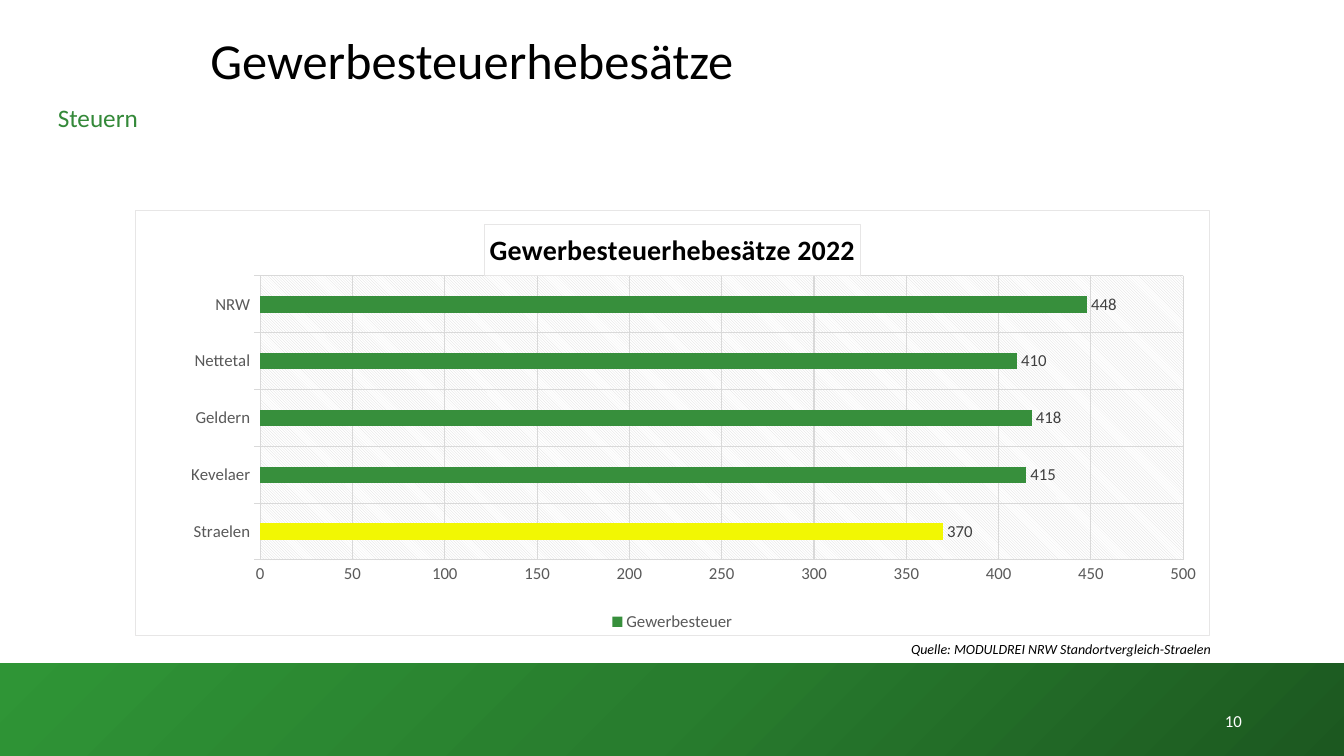
from lxml import etree
from pptx import Presentation
from pptx.chart.data import CategoryChartData
from pptx.dml.color import RGBColor
from pptx.enum.chart import (
    XL_CHART_TYPE as ChartType,
    XL_LABEL_POSITION as LabelPosition,
    XL_LEGEND_POSITION as LegendPosition,
    XL_TICK_MARK as TickMark,
)
from pptx.enum.shapes import MSO_SHAPE as Preset
from pptx.enum.text import MSO_ANCHOR as Anchor, PP_ALIGN as Align
from pptx.oxml import parse_xml
from pptx.util import Pt

SLIDE_WIDTH, SLIDE_HEIGHT = 960, 540
BAND_HEIGHT = 66.3
DRAWING = "http://schemas.openxmlformats.org/drawingml/2006/main"
CHART = "http://schemas.openxmlformats.org/drawingml/2006/chart"
NAMESPACES = f'xmlns:a="{DRAWING}" xmlns:c="{CHART}"'
RATES = {"Straelen": 370, "Kevelaer": 415, "Geldern": 418, "Nettetal": 410, "NRW": 448}


def color(value):
    """Turn a hex string into a colour."""
    return RGBColor.from_string(value)


def style_font(font, size, hex_color, bold=False, italic=False):
    """Set the typeface, size, colour and emphasis of a font."""
    font.name = "Calibri"
    font.size = Pt(size)
    font.color.rgb = color(hex_color)
    font.bold = bold
    font.italic = italic


def style_line(line, hex_color):
    """Give a line its colour and the common thin width."""
    line.color.rgb = color(hex_color)
    line.width = Pt(0.75)


def add_label(slide, box, text, size, hex_color, align=Align.LEFT,
              anchor=Anchor.TOP, spacing=1.0, italic=False):
    """Place one line of text in a box."""
    frame = slide.shapes.add_textbox(*map(Pt, box)).text_frame
    frame.word_wrap = True
    frame.vertical_anchor = anchor
    paragraph = frame.paragraphs[0]
    paragraph.alignment = align
    paragraph.line_spacing = spacing
    run = paragraph.add_run()
    run.text = text
    style_font(run.font, size, hex_color, italic=italic)


def add_header(slide, left, top):
    """Place the title and the topic below it."""
    add_label(slide, (left + 117.4, top, 773, 62.6), "Gewerbesteuerhebesätze",
              36, "000000", spacing=0.9)
    add_label(slide, (left, top + 47.5, 88, 29), "Steuern", 18, "348939", Align.CENTER)


def add_footer(slide, left, top, width, height):
    """Draw the green gradient band with the page number."""
    band = slide.shapes.add_shape(Preset.RECTANGLE, *map(Pt, (left, top, width, height)))
    band.shadow.inherit = False
    band.line.fill.background()
    band.fill.gradient()
    band.fill.gradient_angle = 135
    stops = band.element.spPr.find(f".//{{{DRAWING}}}gsLst")
    for stop in list(stops):
        stops.remove(stop)
    for position, shade in ((0, "1C5820"), (50, "287D2E"), (100, "2F9536")):
        stop = etree.SubElement(stops, f"{{{DRAWING}}}gs", pos=str(position * 1000))
        etree.SubElement(stop, f"{{{DRAWING}}}srgbClr", val=shade)
    add_label(slide, (left + width - 281.8, top + 26.7, 216, 28.8), "10", 12, "FFFFFF",
              Align.RIGHT, Anchor.MIDDLE)


def style_axis(axis, tick_mark):
    """Give an axis its labels, gridlines and tick marks."""
    style_font(axis.tick_labels.font, 12, "595959")
    axis.has_major_gridlines = True
    style_line(axis.major_gridlines.format.line, "D9D9D9")
    axis.major_tick_mark = tick_mark
    axis.minor_tick_mark = TickMark.NONE


def style_chart_areas(chart):
    """Set the chart background, the plot pattern and the plot position."""
    chart_node = chart.element.find(f"{{{CHART}}}chart")
    plot_area = chart_node.find(f"{{{CHART}}}plotArea")
    for layout in plot_area.findall(f"{{{CHART}}}layout"):
        plot_area.remove(layout)
    places = "".join(
        f'<c:{name} val="{value}"/>'
        for name, value in (("x", 0.116), ("y", 0.154), ("w", 0.86), ("h", 0.668))
    )
    plot_area.insert(0, parse_xml(
        f'<c:layout {NAMESPACES}><c:manualLayout><c:layoutTarget val="inner"/>'
        f'<c:xMode val="edge"/><c:yMode val="edge"/>{places}</c:manualLayout></c:layout>'
    ))
    plot_area.append(parse_xml(
        f'<c:spPr {NAMESPACES}><a:pattFill prst="ltDnDiag">'
        '<a:fgClr><a:srgbClr val="D9D9D9"/></a:fgClr>'
        '<a:bgClr><a:srgbClr val="FFFFFF"/></a:bgClr></a:pattFill>'
        '<a:ln><a:noFill/></a:ln></c:spPr>'
    ))
    chart_node.addnext(parse_xml(
        f'<c:spPr {NAMESPACES}><a:solidFill><a:srgbClr val="FFFFFF"/></a:solidFill>'
        '<a:ln w="9525"><a:solidFill><a:srgbClr val="E7E6E6"/></a:solidFill></a:ln></c:spPr>'
    ))


def add_rate_chart(slide, left, top, width, height):
    """Draw the bar chart of tax rates with its source line."""
    data = CategoryChartData()
    data.categories = list(RATES)
    data.add_series("Gewerbesteuer", list(RATES.values()))
    chart = slide.shapes.add_chart(
        ChartType.BAR_CLUSTERED, *map(Pt, (left, top, width, height)), data
    ).chart
    style_font(chart.font, 10, "000000")

    chart.has_title = True
    title = chart.chart_title
    run = title.text_frame.paragraphs[0].add_run()
    run.text = "Gewerbesteuerhebesätze 2022"
    style_font(run.font, 20, "000000", bold=True)
    style_line(title.format.line, "E7E6E6")

    chart.has_legend = True
    chart.legend.position = LegendPosition.BOTTOM
    chart.legend.include_in_layout = False
    style_font(chart.legend.font, 12, "595959")

    style_axis(chart.category_axis, TickMark.OUTSIDE)
    style_line(chart.category_axis.format.line, "D9D9D9")
    style_axis(chart.value_axis, TickMark.NONE)
    chart.value_axis.format.line.fill.background()
    chart.value_axis.minimum_scale = 0
    chart.value_axis.maximum_scale = 500
    chart.value_axis.major_unit = 50

    plot = chart.plots[0]
    plot.gap_width = 247
    plot.overlap = -20
    plot.vary_by_categories = False
    series = plot.series[0]
    series.invert_if_negative = False
    for bar, shade in ((series, "378F3C"), (series.points[0], "F2F703")):
        bar.format.fill.solid()
        bar.format.fill.fore_color.rgb = color(shade)
    labels = series.data_labels
    labels.show_value = True
    labels.position = LabelPosition.OUTSIDE_END
    style_font(labels.font, 12, "404040")
    style_chart_areas(chart)

    add_label(slide, (left + 547.2, top + height - 0.7, 250, 19.4),
              "Quelle: MODULDREI NRW Standortvergleich-Straelen", 10, "000000", italic=True)


def main():
    """Build the slide and save it."""
    presentation = Presentation()
    presentation.slide_width = Pt(SLIDE_WIDTH)
    presentation.slide_height = Pt(SLIDE_HEIGHT)
    slide = presentation.slides.add_slide(presentation.slide_layouts[6])
    add_footer(slide, 0, SLIDE_HEIGHT - BAND_HEIGHT, SLIDE_WIDTH, BAND_HEIGHT)
    add_rate_chart(slide, 96.5, 150, 767.5, 304.5)
    add_header(slide, 25.9, 22.3)
    presentation.save("out.pptx")


if __name__ == "__main__":
    main()
